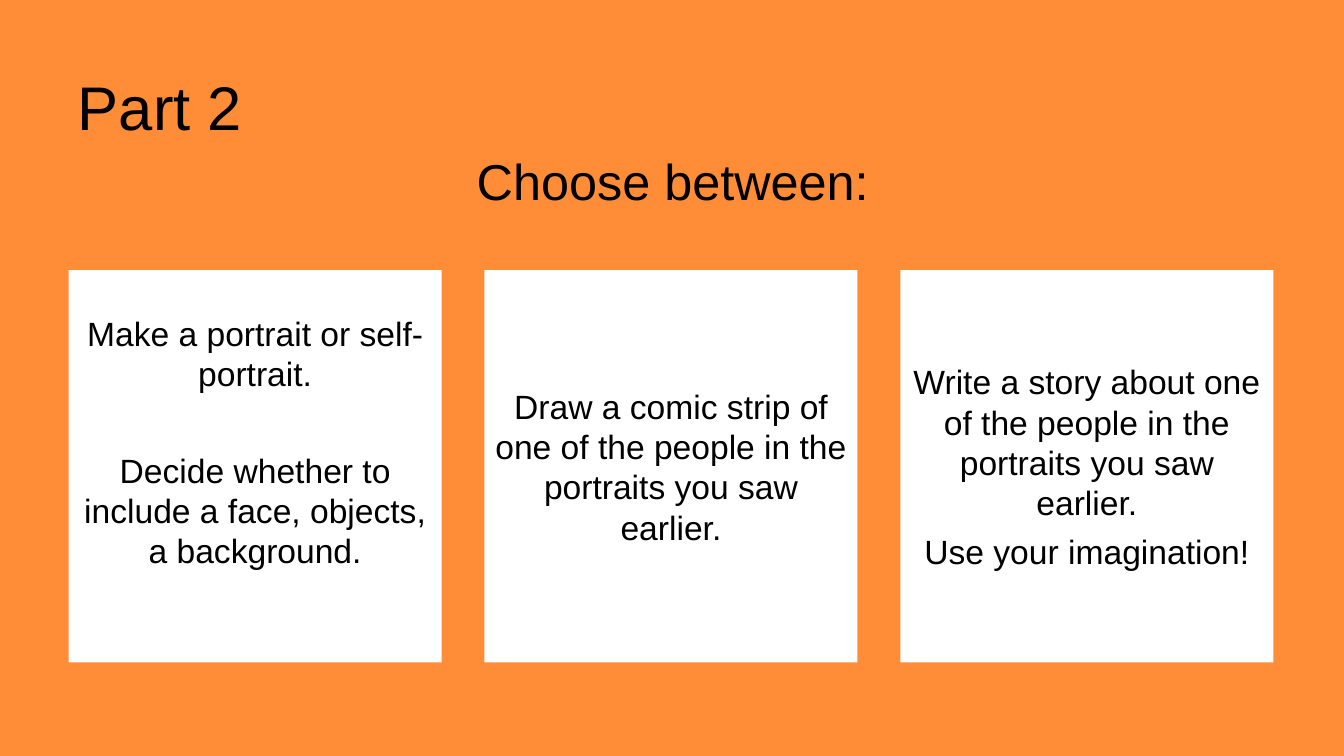
from dataclasses import dataclass

from lxml.etree import SubElement
from pptx import Presentation
from pptx.dml.color import RGBColor
from pptx.enum.shapes import MSO_SHAPE as Preset
from pptx.enum.text import MSO_ANCHOR as Anchor
from pptx.enum.text import MSO_AUTO_SIZE as AutoSize
from pptx.enum.text import PP_ALIGN as Align
from pptx.oxml.ns import qn
from pptx.util import Cm, Pt


@dataclass(frozen=True)
class Theme:
    font: str = "Arial"
    background: RGBColor = RGBColor(0xFF, 0x8C, 0x37)
    card: RGBColor = RGBColor(0xFF, 0xFF, 0xFF)
    ink: RGBColor = RGBColor(0, 0, 0)
    title_size: int = 44
    prompt_size: int = 36
    card_size: int = 24


THEME = Theme()

# Card grid, in centimetres
CARD_LEFT, CARD_TOP, CARD_STEP = 1.73, 6.81, 10.48
CARD_WIDTH, CARD_HEIGHT = 9.4, 9.88

# Each choice: (text, space after in points) per paragraph, and bottom inset in cm
CHOICES = [
    ([("Make a portrait or self-portrait.", 40),
      ("Decide whether to include a face, objects, a background.", 6)], 1.36),
    ([("Draw a comic strip of one of the people in the portraits you saw earlier.", 6)], 0.13),
    ([("Write a story about one of the people in the portraits you saw earlier.", 6),
      ("Use your imagination!", 6)], 0.13),
]


def write(paragraph, text, size, align, after=0, spacing=1.0):
    paragraph.alignment = align
    paragraph.space_after = Pt(after)
    paragraph.line_spacing = spacing
    run = paragraph.add_run()
    run.text = text
    run.font.name = THEME.font
    run.font.size = Pt(size)
    run.font.color.rgb = THEME.ink


def place_heading(holder, left, top):
    """Position a placeholder and return its first paragraph."""
    holder.left, holder.top = Cm(left), Cm(top)
    holder.width, holder.height = Cm(30.25), Cm(2.77)
    frame = holder.text_frame
    frame.auto_size = AutoSize.NONE
    frame.vertical_anchor = Anchor.TOP
    frame.margin_left = frame.margin_right = Cm(0.18)
    frame.margin_top = frame.margin_bottom = Cm(0.25)
    return frame.paragraphs[0]


def remove_bullet(paragraph):
    properties = paragraph._p.get_or_add_pPr()
    properties.set("marL", "0")
    properties.set("indent", "0")
    SubElement(properties, qn("a:buNone"))


def add_card(slide, column, paragraphs, bottom_inset):
    card = slide.shapes.add_shape(
        Preset.RECTANGLE, Cm(CARD_LEFT + column * CARD_STEP), Cm(CARD_TOP),
        Cm(CARD_WIDTH), Cm(CARD_HEIGHT))
    card.shadow.inherit = False
    card.fill.solid()
    card.fill.fore_color.rgb = THEME.card
    card.line.fill.background()
    frame = card.text_frame
    frame.word_wrap = True
    frame.vertical_anchor = Anchor.MIDDLE
    frame.margin_bottom = Cm(bottom_inset)
    for index, (text, after) in enumerate(paragraphs):
        paragraph = frame.add_paragraph() if index else frame.paragraphs[0]
        write(paragraph, text, THEME.card_size, Align.CENTER, after)


def main():
    deck = Presentation()
    deck.slide_width, deck.slide_height = Cm(33.87), Cm(19.05)
    slide = deck.slides.add_slide(deck.slide_layouts[1])
    slide.background.fill.solid()
    slide.background.fill.fore_color.rgb = THEME.background

    # Title and prompt
    title = place_heading(slide.shapes.title, 1.78, 1.7)
    write(title, "Part 2", THEME.title_size, Align.LEFT, spacing=0.9)
    prompt = place_heading(slide.placeholders[1], 1.83, 3.53)
    write(prompt, "Choose between:", THEME.prompt_size, Align.CENTER, after=4)
    prompt.space_before = Pt(10)
    remove_bullet(prompt)

    # Three choices
    for column, (paragraphs, bottom_inset) in enumerate(CHOICES):
        add_card(slide, column, paragraphs, bottom_inset)

    deck.save("out.pptx")


if __name__ == "__main__":
    main()
